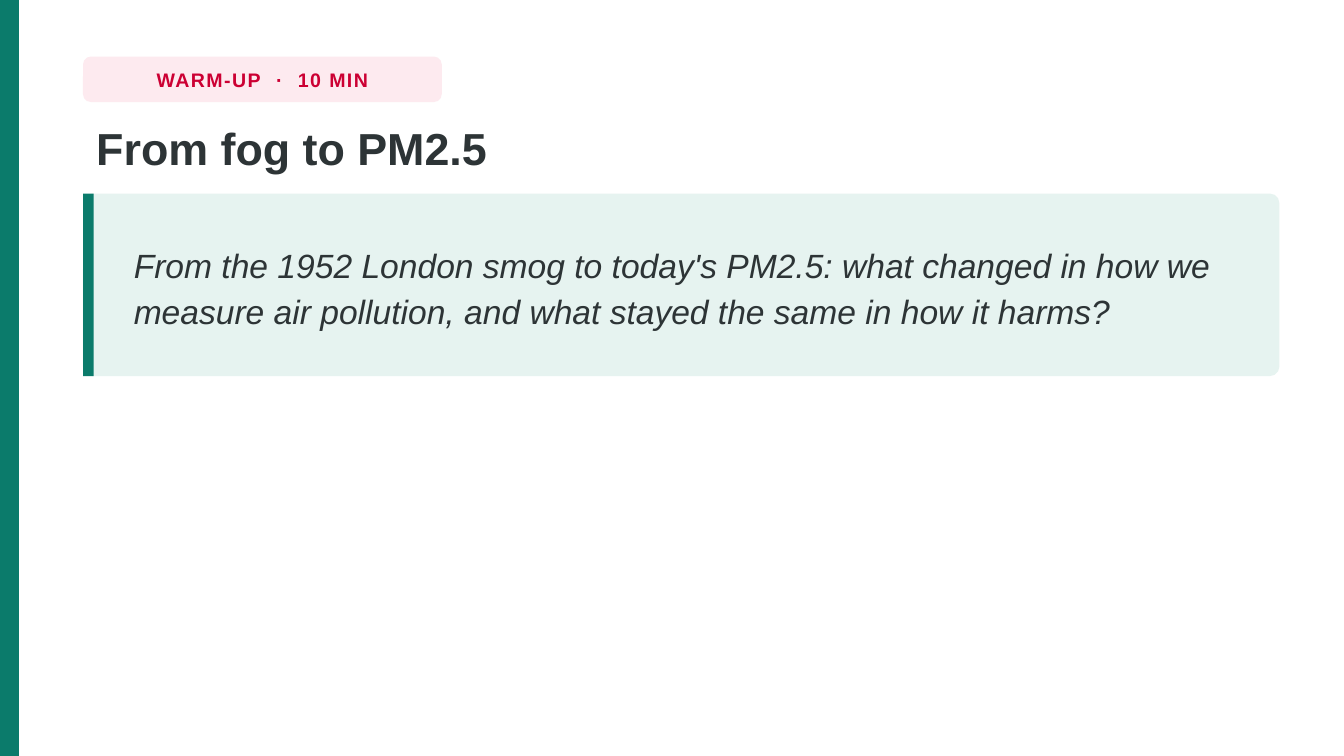
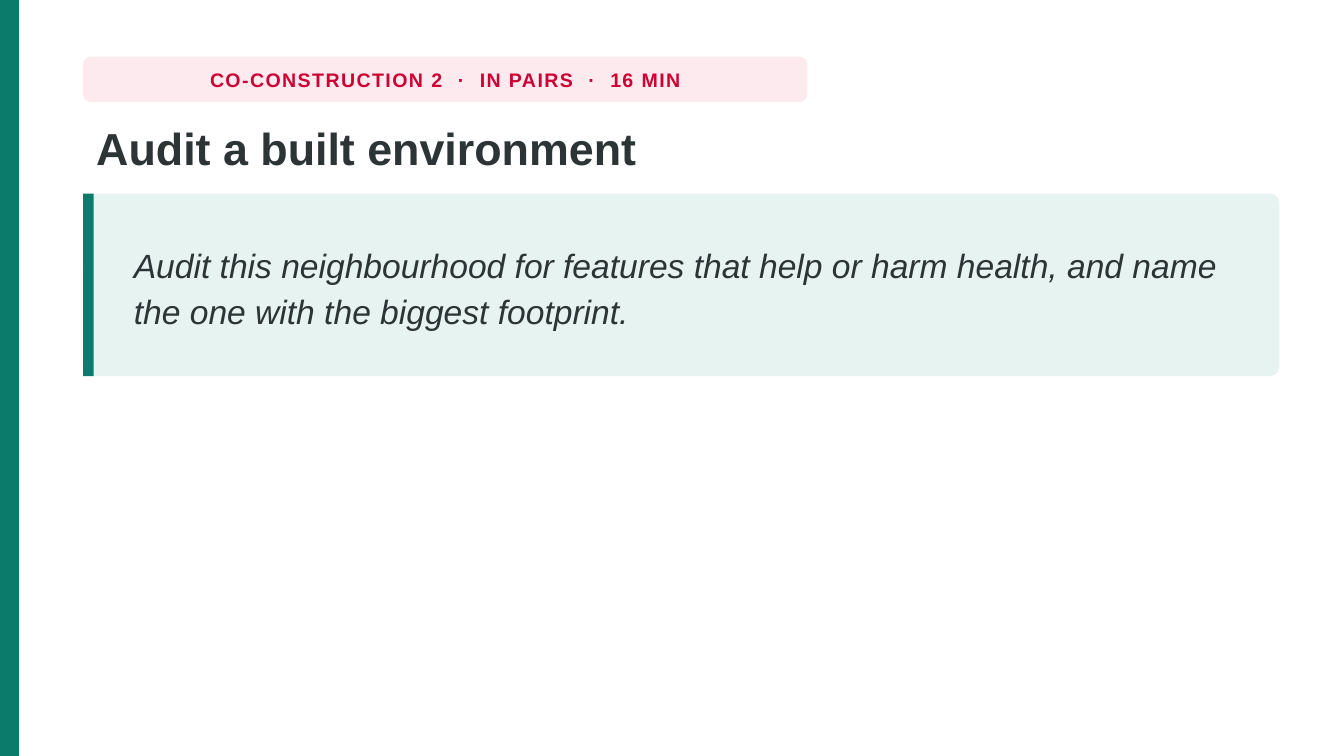
from dataclasses import dataclass

from pptx import Presentation
from pptx.dml.color import RGBColor
from pptx.enum.shapes import MSO_SHAPE
from pptx.enum.text import MSO_ANCHOR, PP_ALIGN
from pptx.util import Cm, Pt

RECT, ROUNDED = MSO_SHAPE.RECTANGLE, MSO_SHAPE.ROUNDED_RECTANGLE
TOP, MIDDLE = MSO_ANCHOR.TOP, MSO_ANCHOR.MIDDLE
LEFT, CENTER = PP_ALIGN.LEFT, PP_ALIGN.CENTER

ACTIVITIES = [
    {
        "tag": ["WARM-UP", "10 MIN"],
        "tag_width": 6.78,
        "title": "From fog to PM2.5",
        "prompt": "From the 1952 London smog to today's PM2.5: what changed in how we "
                  "measure air pollution, and what stayed the same in how it harms?",
    },
    {
        "tag": ["CO-CONSTRUCTION 2", "IN PAIRS", "16 MIN"],
        "tag_width": 13.69,
        "title": "Audit a built environment",
        "prompt": "Audit this neighbourhood for features that help or harm health, "
                  "and name the one with the biggest footprint.",
    },
]


@dataclass(frozen=True)
class Theme:
    font: str = "Arial"
    background: str = "FFFFFF"
    accent: str = "0B7B6B"
    accent_tint: str = "E6F3F0"
    tag: str = "CC0033"
    tag_tint: str = "FDEAEF"
    ink: str = "2D3436"
    tag_size: float = 10.5
    title_size: float = 24
    prompt_size: float = 18
    tag_tracking: float = 0.8
    gap_tracking: float = 4.52


THEME = Theme()

# Lengths in centimetres
SLIDE_W, SLIDE_H = 25.4, 14.29
EDGE_W = 0.36
MARGIN = 1.57
CONTENT_W = 22.61
TAG_TOP, TAG_H, TAG_RADIUS = 1.07, 0.86, 0.15
TITLE_TOP, TITLE_H = 2.13, 1.42
CARD_TOP, CARD_H, CARD_RADIUS = 3.66, 3.45, 0.18
CARD_BAR_W = 0.2
PROMPT_INDENT, PROMPT_W, PROMPT_INSET = 0.71, 21.21, 0.13


def add_panel(slide, box, color, radius=0):
    """Add a plain filled rectangle, rounded when a radius is given."""
    panel = slide.shapes.add_shape(ROUNDED if radius else RECT, *map(Cm, box))
    if radius:
        panel.adjustments[0] = radius / min(box[2:])
    panel.shadow.inherit = False
    panel.fill.solid()
    panel.fill.fore_color.rgb = RGBColor.from_string(color)
    panel.line.fill.background()


def add_paragraph_box(slide, box, anchor=TOP, align=LEFT, spacing=None, wrap=True):
    """Add a text box and return its empty paragraph."""
    frame = slide.shapes.add_textbox(*map(Cm, box)).text_frame
    frame.word_wrap = wrap
    frame.vertical_anchor = anchor
    paragraph = frame.paragraphs[0]
    paragraph.alignment = align
    paragraph.line_spacing = spacing
    return paragraph


def add_run(paragraph, text, size, color, bold=False, italic=False, tracking=None):
    run = paragraph.add_run()
    run.text = text
    font = run.font
    font.name, font.size = THEME.font, Pt(size)
    font.bold, font.italic = bold, italic
    font.color.rgb = RGBColor.from_string(color)
    if tracking is not None:
        run._r.get_or_add_rPr().set("spc", str(round(tracking * 100)))


def add_tag(slide, parts, width):
    box = (MARGIN, TAG_TOP, width, TAG_H)
    add_panel(slide, box, THEME.tag_tint, TAG_RADIUS)
    paragraph = add_paragraph_box(slide, box, MIDDLE, CENTER, wrap=False)
    gap = (" ", THEME.gap_tracking)
    dot = ("·", THEME.tag_tracking)
    for index, part in enumerate(parts):
        pieces = [gap, dot, gap] if index else []
        for text, tracking in pieces + [(part, THEME.tag_tracking)]:
            add_run(paragraph, text, THEME.tag_size, THEME.tag,
                    bold=True, tracking=tracking)


def add_title(slide, title):
    box = (MARGIN, TITLE_TOP, CONTENT_W, TITLE_H)
    paragraph = add_paragraph_box(slide, box, spacing=1.02)
    add_run(paragraph, title, THEME.title_size, THEME.ink, bold=True)


def add_prompt(slide, prompt):
    add_panel(slide, (MARGIN, CARD_TOP, CONTENT_W, CARD_H), THEME.accent_tint, CARD_RADIUS)
    add_panel(slide, (MARGIN, CARD_TOP, CARD_BAR_W, CARD_H), THEME.accent)
    box = (MARGIN + PROMPT_INDENT, CARD_TOP + PROMPT_INSET,
           PROMPT_W, CARD_H - 2 * PROMPT_INSET)
    paragraph = add_paragraph_box(slide, box, MIDDLE, spacing=1.16)
    add_run(paragraph, prompt, THEME.prompt_size, THEME.ink, italic=True)


def add_activity(deck, activity):
    slide = deck.slides.add_slide(deck.slide_layouts[6])
    slide.background.fill.solid()
    slide.background.fill.fore_color.rgb = RGBColor.from_string(THEME.background)
    add_panel(slide, (0, 0, EDGE_W, SLIDE_H), THEME.accent)
    add_tag(slide, activity["tag"], activity["tag_width"])
    add_title(slide, activity["title"])
    add_prompt(slide, activity["prompt"])


def main():
    deck = Presentation()
    deck.slide_width, deck.slide_height = Cm(SLIDE_W), Cm(SLIDE_H)
    for activity in ACTIVITIES:
        add_activity(deck, activity)
    deck.save("out.pptx")


if __name__ == "__main__":
    main()
